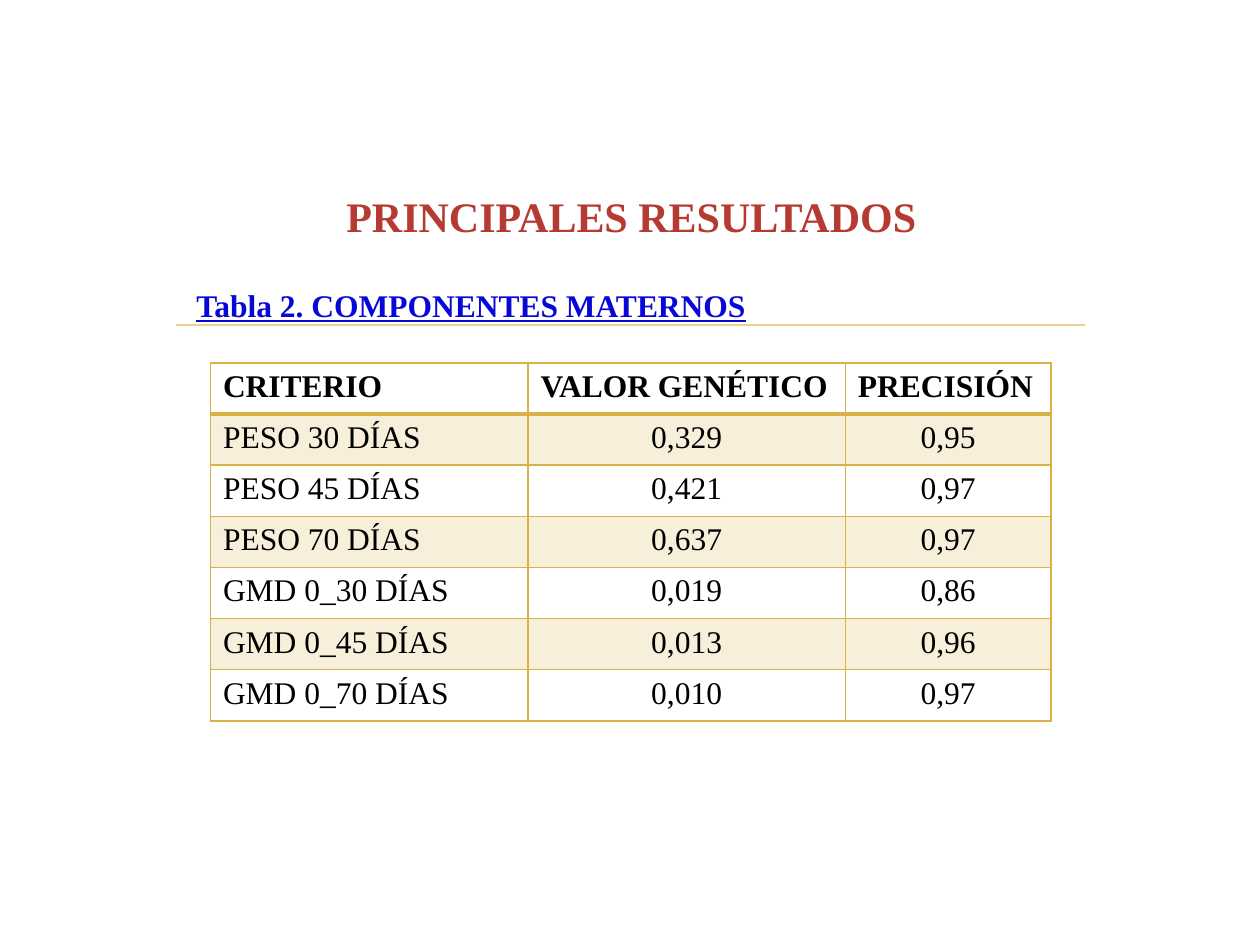
from lxml.etree import SubElement
from pptx import Presentation
from pptx.dml.color import RGBColor
from pptx.enum.shapes import MSO_CONNECTOR
from pptx.enum.text import MSO_ANCHOR, MSO_AUTO_SIZE, PP_ALIGN
from pptx.oxml import parse_xml
from pptx.oxml.ns import nsdecls, qn
from pptx.util import Inches, Pt

COLORS = {"title": "B53A31", "caption": "0707D7", "text": "000000",
          "gold": "D9B247", "rule": "E8D191"}


def write(frame, text, color, align=PP_ALIGN.LEFT, **formats):
    paragraph = frame.paragraphs[0]
    paragraph.alignment = align
    run = paragraph.add_run()
    run.text = text
    for name, value in {"name": "Times New Roman", "size": Pt(18), **formats}.items():
        setattr(run.font, name, value)
    run.font.color.rgb = RGBColor.from_string(COLORS[color])


def add_border(cell, side, points):
    cell._tc.get_or_add_tcPr().append(parse_xml(
        f'<a:{side} {nsdecls("a")} w="{Pt(points)}"><a:solidFill>'
        f'<a:srgbClr val="{COLORS["gold"]}"/></a:solidFill></a:{side}>'))


prs = Presentation()
prs.slide_width, prs.slide_height = Inches(10), Inches(7.5)
W, H = prs.slide_width, prs.slide_height
slide = prs.slides.add_slide(prs.slide_layouts[5])

rule_y = int(H * 0.344)
rule = slide.shapes.add_connector(
    MSO_CONNECTOR.STRAIGHT, int(W * 0.14), rule_y, int(W * 0.861), rule_y)
rule.line.color.rgb = RGBColor.from_string(COLORS["rule"])
rule.line.width = Pt(1.25)
SubElement(rule._element.spPr, qn("a:effectLst"))

title = slide.shapes.title
title_place = {"left": W * 0.129, "top": H * 0.133, "width": W * 0.744, "height": H * 0.191}
for name, value in title_place.items():
    setattr(title, name, int(value))
title.text_frame.vertical_anchor = MSO_ANCHOR.MIDDLE
write(title.text_frame, "PRINCIPALES RESULTADOS", "title", PP_ALIGN.CENTER,
      size=Pt(24), bold=True)

results = [
    ("CRITERIO", "VALOR GENÉTICO", "PRECISIÓN"),
    ("PESO 30 DÍAS", "0,329", "0,95"),
    ("PESO 45 DÍAS", "0,421", "0,97"),
    ("PESO 70 DÍAS", "0,637", "0,97"),
    ("GMD 0_30 DÍAS", "0,019", "0,86"),
    ("GMD 0_45 DÍAS", "0,013", "0,96"),
    ("GMD 0_70 DÍAS", "0,010", "0,97"),
]
column_shares = (0.252, 0.252, 0.163)
table = slide.shapes.add_table(
    len(results), len(column_shares), int(W * 0.167), int(H * 0.384),
    int(W * sum(column_shares)), int(H * 0.379)).table
for flag in ("first_row", "horz_banding"):
    setattr(table, flag, False)
for column, share in zip(table.columns, column_shares):
    column.width = int(W * share)

for r, record in enumerate(results):
    for c, entry in enumerate(record):
        cell = table.cell(r, c)
        centered = r > 0 and c > 0
        write(cell.text_frame, entry, "text",
              PP_ALIGN.CENTER if centered else PP_ALIGN.LEFT, bold=r == 0)
        widths = {"lnL": 1, "lnR": 1, "lnT": 2 if r == 1 else 1, "lnB": 2 if r == 0 else 1}
        for side, points in widths.items():
            add_border(cell, side, points)
        if r % 2:
            cell.fill.solid()
            cell.fill.fore_color.rgb = RGBColor.from_string(COLORS["gold"])
            tint = cell._tc.tcPr.find(qn("a:solidFill")).find(qn("a:srgbClr"))
            SubElement(tint, qn("a:alpha"), val="20000")
        else:
            cell.fill.background()

caption = slide.shapes.add_textbox(
    int(W * 0.146), int(H * 0.296), int(W * 0.496), int(H * 0.053)).text_frame
for name, value in {"word_wrap": True, "auto_size": MSO_AUTO_SIZE.SHAPE_TO_FIT_TEXT}.items():
    setattr(caption, name, value)
write(caption, "Tabla 2. COMPONENTES MATERNOS", "caption", bold=True, underline=True)

prs.save("out.pptx")
